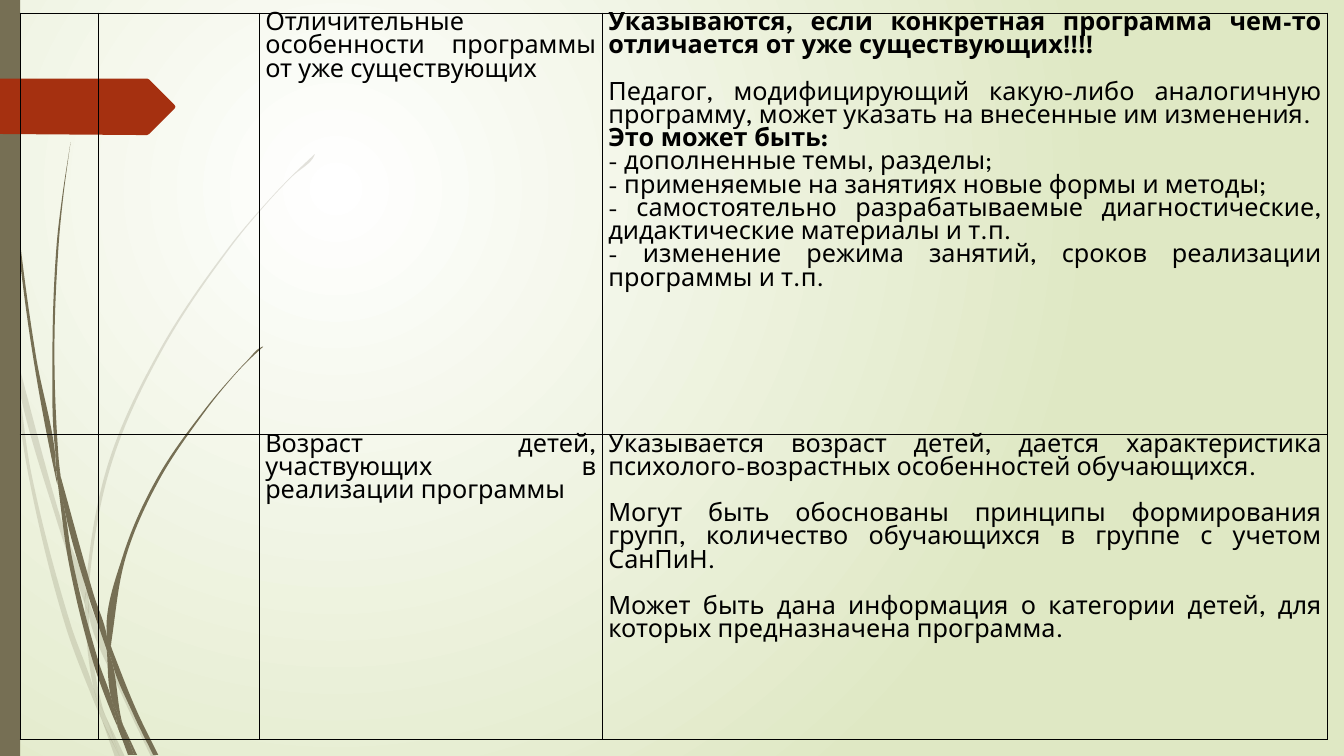
from math import dist

from lxml import etree
from pptx import Presentation
from pptx import util as u
from pptx.dml.color import RGBColor
from pptx.enum import shapes, text
from pptx.oxml import parse_xml
from pptx.oxml.ns import nsdecls, qn

FONT = "League Spartan"
OLIVE, RED, BLACK = "766F54", "A53010", "000000"
WHITE, PALE_GREEN = "FFFFFF", "DFE8C4"

# Outlines of the grass blades, in inches
PALE_BLADES = [
    [(0.11, 3.5), (0.09, 3.22), (0, 2.82), (0, 2.99), (0.1, 3.44)],
    [(0.58, 5.22), (0.84, 5.99), (0.85, 5.86), (0.62, 5.2), (0.14, 3.45), (0.17, 3.76)],
    [(0.92, 6.07), (0.88, 5.96), (0.88, 6.1), (1.23, 6.94), (1.5, 7.51), (1.55, 7.51),
     (1.27, 6.92)],
    [(1.19, 7.51), (1.24, 7.51), (1.05, 7.11)],
    [(0.93, 6.83), (0.7, 6.19), (0.31, 4.69), (0.17, 3.76), (0.11, 3.5), (0.28, 4.7),
     (0.65, 6.21), (0.92, 6.93), (1.01, 7.14), (0.99, 7.07)],
    [(0.84, 5.99), (0.87, 6.46), (0.93, 6.83), (0.96, 6.92), (1.05, 7.11), (1.03, 7.06),
     (0.91, 6.46), (0.88, 6.1), (0.88, 6.08)],
    [(0.88, 5.84), (1.1, 4.62), (1.6, 3.49), (2.29, 2.45), (2.68, 1.98), (2.9, 1.75),
     (3.12, 1.54), (3.12, 1.53), (2.89, 1.75), (2.68, 1.97), (2.28, 2.44), (1.58, 3.48),
     (1.07, 4.61), (0.85, 5.84), (0.85, 5.86), (0.88, 5.96)],
    [(1.01, 7.14), (1.14, 7.51), (1.19, 7.51)],
    [(0.88, 6.08), (0.88, 6.1), (0.88, 5.96), (0.85, 5.86), (0.84, 5.99)],
    [(0.96, 6.92), (0.93, 6.83), (0.99, 7.07), (1.01, 7.14), (1.19, 7.51), (1.05, 7.11)],
]
DARK_BLADES = [
    [(0.07, 1.1), (0.17, 2.33), (0.33, 3.55), (0.56, 4.77), (0.57, 4.81), (0.55, 4.57),
     (0.55, 4.53), (0.36, 3.55), (0.19, 2.32), (0.08, 1.09), (0.05, 0.48), (0.04, 0),
     (0.03, 0), (0.04, 0.48)],
    [(0.88, 5.92), (1.06, 6.45), (1.06, 6.33), (1.06, 6.31), (0.93, 5.9), (0.6, 4.72),
     (0.64, 5.05)],
    [(1.13, 6.49), (1.1, 6.41), (1.11, 6.56), (1.32, 7.08), (1.52, 7.49), (1.57, 7.49),
     (1.36, 7.06)],
    [(1.1, 6.91), (0.98, 6.57), (0.72, 5.56), (0.64, 5.05), (0.57, 4.77), (0.68, 5.57),
     (0.93, 6.59), (1.11, 7.08), (1.17, 7.22), (1.16, 7.17)],
    [(0.6, 4.72), (0.58, 4.53), (0.54, 3.49), (0.58, 2.45), (0.63, 1.93), (0.7, 1.41),
     (0.62, 1.93), (0.56, 2.45), (0.52, 3.49), (0.55, 4.49)],
    [(1.33, 7.49), (1.36, 7.49), (1.22, 7.19)],
    [(0.57, 4.77), (0.64, 5.05), (0.6, 4.72), (0.55, 4.49), (0.55, 4.53)],
    [(1.11, 6.33), (1.25, 5.52), (1.58, 4.76), (2.05, 4.06), (2.31, 3.74), (2.45, 3.59),
     (2.61, 3.44), (2.6, 3.44), (2.45, 3.58), (2.31, 3.73), (2.04, 4.05), (1.56, 4.74),
     (1.22, 5.51), (1.06, 6.31), (1.1, 6.41)],
    [(1.17, 7.22), (1.27, 7.49), (1.31, 7.49)],
    [(1.06, 6.45), (1.1, 6.91), (1.16, 7.06), (1.22, 7.19), (1.21, 7.16), (1.11, 6.56),
     (1.09, 6.51)],
    [(1.06, 6.45), (1.09, 6.51), (1.11, 6.56), (1.1, 6.41), (1.06, 6.31), (1.06, 6.33)],
    [(1.16, 7.06), (1.1, 6.91), (1.16, 7.17), (1.17, 7.22), (1.3, 7.49), (1.33, 7.49),
     (1.22, 7.19)],
]
ARROW = [(1.73, 0.3), (1.48, 0.55), (1.46, 0.56), (1.36, 0.56), (0, 0.55), (0, 0),
         (1.36, 0), (1.46, 0), (1.48, 0.01), (1.73, 0.26), (1.74, 0.28)]

# Paragraphs: wording, bold, gap of one line above
ROWS = [
    ([("Отличительные особенности программы от уже существующих", False, False)],
     [("Указываются, если конкретная программа чем-то отличается от уже существующих!!!!",
       True, False),
      ("Педагог, модифицирующий какую-либо аналогичную программу, может указать на "
       "внесенные им изменения.", False, True),
      ("Это может быть:", True, False),
      ("- дополненные темы, разделы;", False, False),
      ("- применяемые на занятиях новые формы и методы;", False, False),
      ("- самостоятельно разрабатываемые диагностические, дидактические материалы и т.п.",
       False, False),
      ("- изменение режима занятий, сроков реализации программы и т.п.", False, False)]),
    ([("Возраст детей, участвующих в реализации программы", False, False)],
     [("Указывается возраст детей, дается характеристика психолого-возрастных особенностей "
       "обучающихся.", False, False),
      ("Могут быть обоснованы принципы формирования групп, количество обучающихся в группе "
       "с учетом СанПиН.", False, True),
      ("Может быть дана информация о категории детей, для которых предназначена программа.",
       False, True)]),
]
COLUMN_WIDTHS = [0.78, 1.59, 3.4, 7.19]
ROW_HEIGHTS = [4.18, 3.03]


def rgb(value):
    return RGBColor.from_string(value)


def paint(shape, color, alpha=None):
    shape.shadow.inherit = False
    shape.fill.solid()
    shape.fill.fore_color.rgb = rgb(color)
    shape.line.fill.background()
    if alpha:
        solid = shape.fill.fore_color._xFill.find(qn("a:srgbClr"))
        etree.SubElement(solid, qn("a:alpha"), val=str(alpha * 1000))


def unit(start, end):
    length = dist(start, end)
    return [(b - a) / length for a, b in zip(start, end)]


def bend(shape):
    """Turn the sides of a closed outline into curves, keeping its sharp corners."""
    points = [(int(point.get("x")), int(point.get("y")))
              for point in shape._element.iter(qn("a:pt"))][:-1]
    count = len(points)
    chords = [unit(points[i], points[(i + 1) % count]) for i in range(count)]
    for i, line in enumerate(list(shape._element.iter(qn("a:lnTo")))):
        start, end = points[i], points[(i + 1) % count]
        handles = []
        for anchor, neighbour, sign in ((start, i - 1, 1), (end, (i + 1) % count, -1)):
            chord, other = chords[i], chords[neighbour]
            tangent = chord
            if sum(a * b for a, b in zip(chord, other)) > 0.5:
                tangent = unit((0, 0), [a + b for a, b in zip(chord, other)])
            reach = sign * dist(start, end) / 3
            handles.append([round(a + reach * b) for a, b in zip(anchor, tangent)])
        curve = etree.Element(qn("a:cubicBezTo"))
        for x, y in (*handles, end):
            etree.SubElement(curve, qn("a:pt"), x=str(x), y=str(y))
        line.getparent().replace(line, curve)


def add_outline(slide, left, top, points, color, alpha=None, curved=False):
    placed = [(u.Inches(left + x), u.Inches(top + y)) for x, y in points]
    builder = slide.shapes.build_freeform(*placed[0])
    builder.add_line_segments(placed[1:] + placed[:1], close=True)
    shape = builder.convert_to_shape()
    paint(shape, color, alpha)
    if curved:
        bend(shape)


def add_background(slide):
    fill = slide.background.fill
    fill.gradient()
    for stop, color, position in zip(fill.gradient_stops, (WHITE, PALE_GREEN), (0, 1)):
        stop.color.rgb = rgb(color)
        stop.position = position
    linear = next(slide.background._cSld.iter(qn("a:lin")))
    linear.getparent().replace(linear, parse_xml(
        f'<a:path {nsdecls("a")} path="circle">'
        '<a:fillToRect l="50000" t="50000" r="100000" b="100000"/></a:path>'))


def add_decoration(slide, left, top, height):
    # Grass
    for blades, alpha in ((PALE_BLADES, 20), (DARK_BLADES, None)):
        for blade in blades:
            add_outline(slide, left, top, blade, OLIVE, alpha, curved=True)
    # Side bar and arrow
    bar = slide.shapes.add_shape(shapes.MSO_SHAPE.RECTANGLE, u.Inches(left), u.Inches(top),
                                 u.Inches(0.2), u.Inches(height))
    paint(bar, OLIVE)
    add_outline(slide, left, top + 0.78, ARROW, RED)


def style_cell(cell):
    cell.margin_left = cell.margin_right = u.Inches(0.06)
    cell.margin_top = cell.margin_bottom = 0
    cell.fill.background()
    properties = cell._tc.get_or_add_tcPr()
    for index, side in enumerate(("lnL", "lnR", "lnT", "lnB")):
        properties.insert(index, parse_xml(
            f'<a:{side} {nsdecls("a")} w="12700"><a:solidFill>'
            f'<a:srgbClr val="{BLACK}"/></a:solidFill></a:{side}>'))


def fill_cell(cell, paragraphs):
    frame = cell.text_frame
    frame.text = "\n".join(wording for wording, _, _ in paragraphs)
    for paragraph, (_, bold, gap) in zip(frame.paragraphs, paragraphs):
        paragraph.alignment = text.PP_ALIGN.JUSTIFY
        if gap:
            paragraph.space_before = u.Pt(16.5)
        font = paragraph.runs[0].font
        font.name, font.size, font.bold = FONT, u.Pt(18), bold
        font.color.rgb = rgb(BLACK)


def add_program_table(slide, left, top, width, height):
    table = slide.shapes.add_table(len(ROW_HEIGHTS), len(COLUMN_WIDTHS), u.Inches(left),
                                   u.Inches(top), u.Inches(width), u.Inches(height)).table
    table.first_row = table.horz_banding = False
    for column, share in zip(table.columns, COLUMN_WIDTHS):
        column.width = u.Inches(width * share / sum(COLUMN_WIDTHS))
    for row, share in zip(table.rows, ROW_HEIGHTS):
        row.height = u.Inches(height * share / sum(ROW_HEIGHTS))
    for cell in table.iter_cells():
        style_cell(cell)
    for row, (feature, description) in enumerate(ROWS):
        fill_cell(table.cell(row, 2), feature)
        fill_cell(table.cell(row, 3), description)


def main():
    presentation = Presentation()
    presentation.slide_width, presentation.slide_height = u.Inches(13.33), u.Inches(7.5)
    slide = presentation.slides.add_slide(presentation.slide_layouts[6])
    add_background(slide)
    add_decoration(slide, 0, 0, 7.5)
    add_program_table(slide, 0.2, 0.13, 12.97, 7.21)
    presentation.save("out.pptx")


if __name__ == "__main__":
    main()
